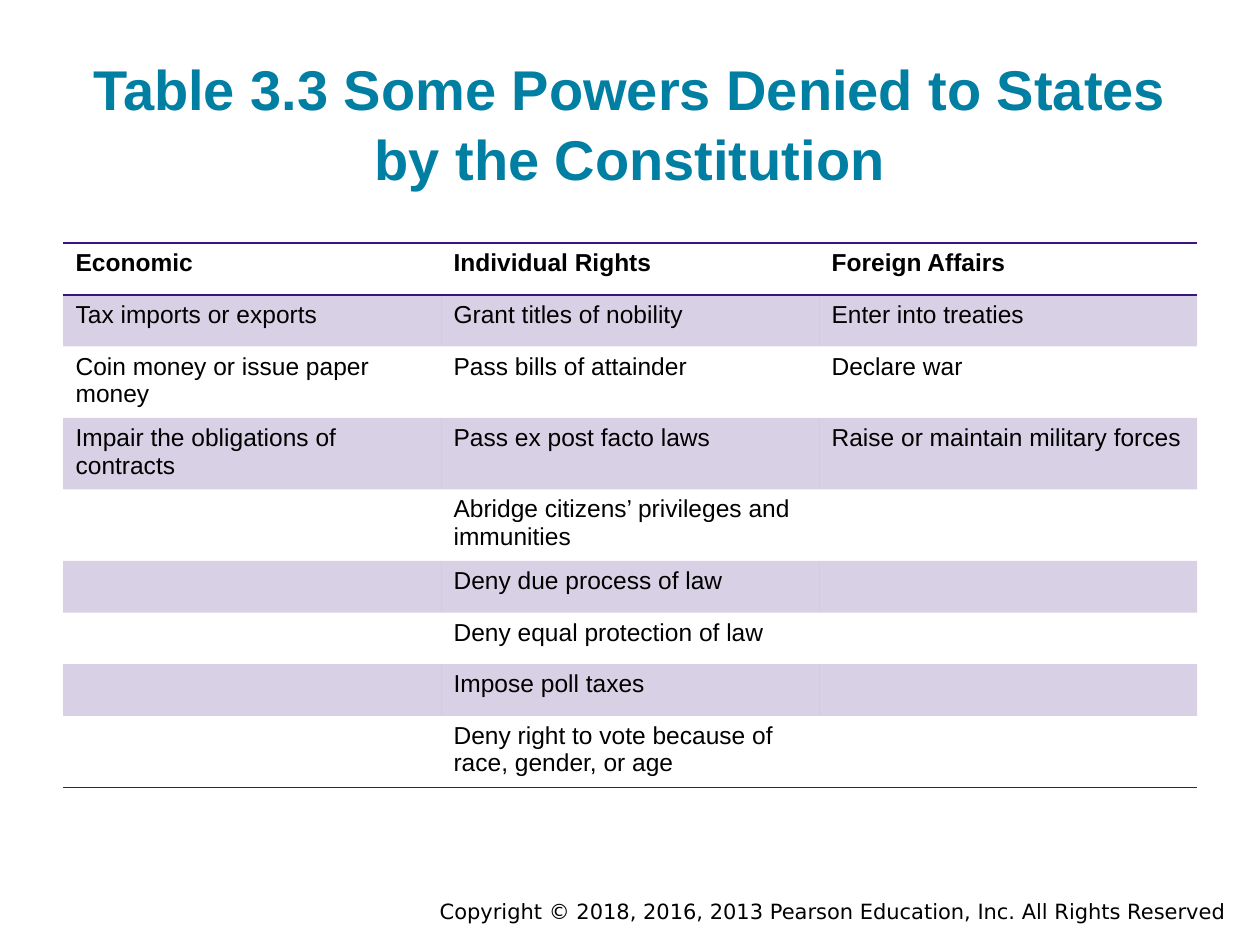
from lxml import etree
from pptx import Presentation
from pptx.dml.color import RGBColor
from pptx.enum.text import MSO_ANCHOR, MSO_AUTO_SIZE, PP_ALIGN
from pptx.oxml.ns import qn
from pptx.util import Inches, Pt

CENTER, RIGHT, LEFT = PP_ALIGN.CENTER, PP_ALIGN.RIGHT, PP_ALIGN.LEFT
BOTTOM, TOP = MSO_ANCHOR.BOTTOM, MSO_ANCHOR.TOP
NO_AUTOFIT = MSO_AUTO_SIZE.NONE
TITLE_ONLY = 5
PLAIN_TABLE_STYLE = "{2D5ABB26-0587-4C30-8999-92F81FD0307C}"
TEAL, PURPLE, BLACK = "007FA3", "3C1581", "000000"
MARGIN, ROW_HEIGHT = 0.5, 0.41

POWERS = {
    "Economic": [
        "Tax imports or exports",
        "Coin money or issue paper money",
        "Impair the obligations of contracts",
    ],
    "Individual Rights": [
        "Grant titles of nobility",
        "Pass bills of attainder",
        "Pass ex post facto laws",
        "Abridge citizens’ privileges and immunities",
        "Deny due process of law",
        "Deny equal protection of law",
        "Impose poll taxes",
        "Deny right to vote because of race, gender, or age",
    ],
    "Foreign Affairs": [
        "Enter into treaties",
        "Declare war",
        "Raise or maintain military forces",
    ],
}


def color(value):
    """Turn a hex string into a colour."""
    return RGBColor.from_string(value)


def write(frame, text, size=14, font="Arial", ink=BLACK, bold=False,
          align=LEFT, anchor=TOP, spacing=None):
    """Put one formatted paragraph into a text frame."""
    frame.word_wrap = True
    frame.vertical_anchor = anchor
    paragraph = frame.paragraphs[0]
    paragraph.alignment = align
    paragraph.line_spacing = spacing
    paragraph.font.size = Pt(size)
    if text:
        run = paragraph.add_run()
        run.text = text
        run.font.size, run.font.name, run.font.bold = Pt(size), font, bold
        run.font.color.rgb = color(ink)


def place(shape, left, top, width, height):
    """Move a shape to a position given in inches."""
    shape.left, shape.top = Inches(left), Inches(top)
    shape.width, shape.height = Inches(width), Inches(height)


def add_title(slide, text):
    """Fill the title placeholder."""
    title = slide.shapes.title
    place(title, MARGIN, 0.42, 9, 1.2)
    frame = title.text_frame
    frame.auto_size = NO_AUTOFIT
    frame.margin_left = frame.margin_right = Inches(0.1)
    frame.margin_top = frame.margin_bottom = Inches(0.1)
    write(frame, text, size=32, ink=TEAL, bold=True, align=CENTER,
          anchor=BOTTOM, spacing=1.04)


def shade(cell, banded):
    """Give a cell a translucent band or no fill."""
    if not banded:
        cell.fill.background()
        return
    cell.fill.solid()
    cell.fill.fore_color.rgb = color(PURPLE)
    tint = cell._tc.get_or_add_tcPr().find(".//" + qn("a:srgbClr"))
    etree.SubElement(tint, qn("a:alpha"), val="20000")


def rule(cell, edges):
    """Draw one-point rules on the named cell edges."""
    properties = cell._tc.get_or_add_tcPr()
    for position, edge in enumerate(edges):
        line = etree.Element(qn(f"a:ln{edge}"), w=str(Pt(1)))
        ink = etree.SubElement(line, qn("a:solidFill"))
        etree.SubElement(ink, qn("a:srgbClr"), val=PURPLE)
        properties.insert(position, line)


def add_powers_table(slide, powers):
    """Lay out each heading and its powers as a table column."""
    last = max(map(len, powers.values()))
    frame = slide.shapes.add_table(
        last + 1, len(powers), Inches(MARGIN), Inches(1.93),
        Inches(9), Inches(ROW_HEIGHT * (last + 1)))
    table = frame.table
    table._tbl.tblPr.find(qn("a:tableStyleId")).text = PLAIN_TABLE_STYLE
    edges = {0: "TB", last: "B"}
    for column, (heading, denied) in enumerate(powers.items()):
        entries = [heading, *denied] + [""] * (last - len(denied))
        for row, entry in enumerate(entries):
            cell = table.cell(row, column)
            write(cell.text_frame, entry, bold=row == 0)
            shade(cell, row % 2 == 1)
            rule(cell, edges.get(row, ""))


def add_copyright(slide, text):
    """Add the right-aligned copyright line."""
    box = slide.shapes.add_textbox(0, 0, 0, 0)
    place(box, 2, 7.08, 7.83, 0.3)
    write(box.text_frame, text, size=12, font="DejaVu Sans", align=RIGHT)


def main():
    """Build and save the slide."""
    deck = Presentation()
    deck.slide_width, deck.slide_height = Inches(10), Inches(7.5)
    slide = deck.slides.add_slide(deck.slide_layouts[TITLE_ONLY])
    add_copyright(slide, "Copyright © 2018, 2016, 2013 Pearson Education, Inc. "
                         "All Rights Reserved")
    add_title(slide, "Table 3.3 Some Powers Denied to States by the Constitution")
    add_powers_table(slide, POWERS)
    deck.save("out.pptx")


if __name__ == "__main__":
    main()
